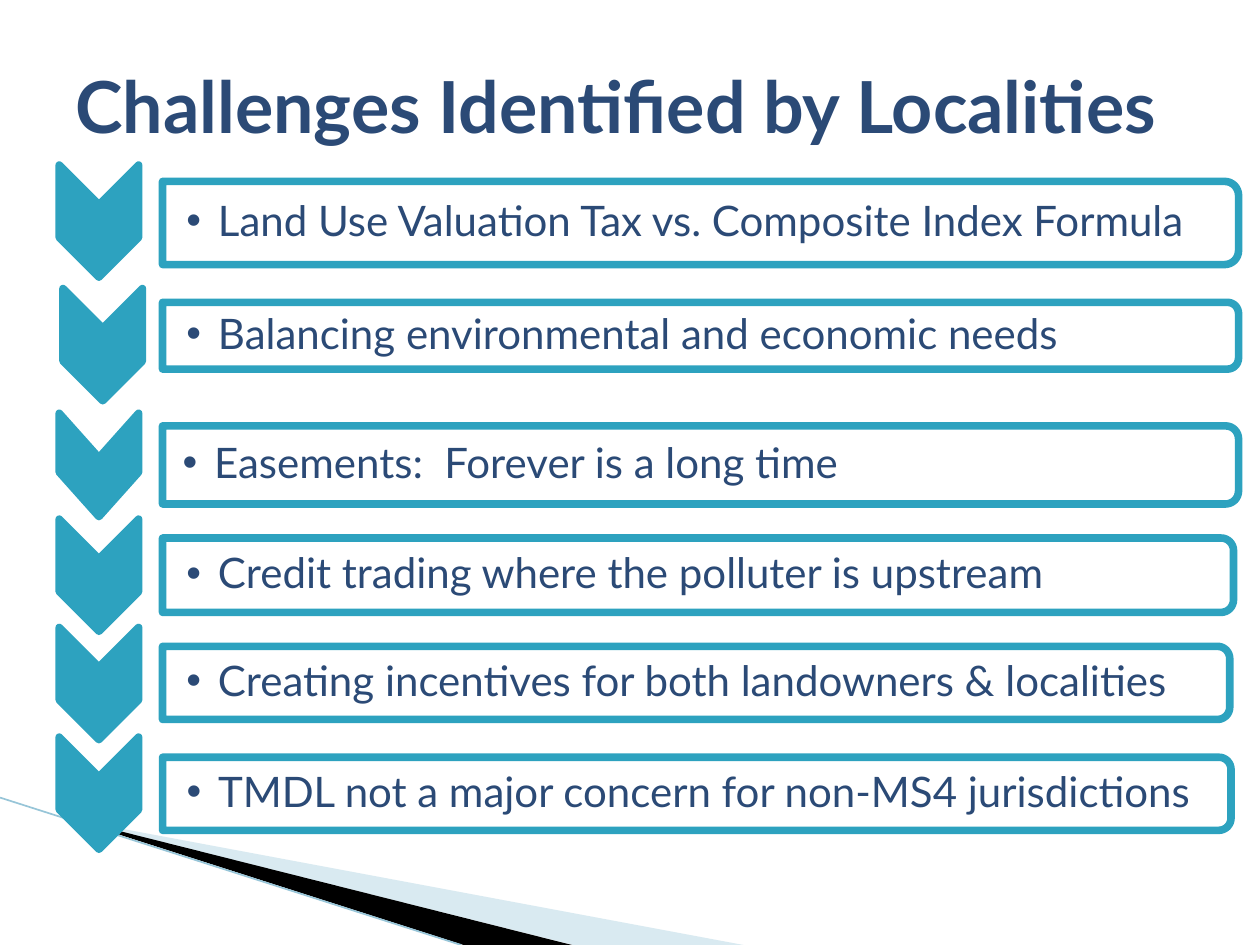
import math
from dataclasses import dataclass

from lxml import etree
from pptx import Presentation
from pptx.dml.color import RGBColor
from pptx.enum.shapes import MSO_CONNECTOR, MSO_SHAPE
from pptx.enum.text import MSO_ANCHOR
from pptx.oxml.ns import qn
from pptx.util import Inches, Pt

STRAIGHT = MSO_CONNECTOR.STRAIGHT
CHEVRON = MSO_SHAPE.CHEVRON
MIDDLE = MSO_ANCHOR.MIDDLE

FONT = "Lato"
NAVY = "2B4A76"
TEAL = "2DA2BF"
WHITE = "FFFFFF"
BLACK = "000000"
PALE_BLUE = "A0CBDC"
LINE_BLUE = "97C5D8"
OUTLINE_WIDTH = 4.33
CHEVRON_WIDTH = 0.63
BOX_LEFT = 1.29
ARC_STEPS = 8


@dataclass
class Challenge:
    text: str
    chevron_top: float
    box_top: float
    box_width: float
    box_height: float
    chevron_left: float = 0.47
    chevron_height: float = 0.89
    chevron_depth: float = 0.5
    inset: float = 0.19


CHALLENGES = [
    Challenge("Land Use Valuation Tax vs. Composite Index Formula", 1.31, 1.44, 8.54, 0.66),
    Challenge("Balancing environmental and economic needs", 2.29, 2.4, 8.54, 0.53, chevron_left=0.5),
    Challenge("Easements:  Forever is a long time", 3.28, 3.38, 8.54, 0.62,
              chevron_height=0.82, chevron_depth=0.56, inset=0.16),
    Challenge("Credit trading where the polluter is upstream", 4.12, 4.27, 8.5, 0.59),
    Challenge("Creating incentives for both landowners & localities", 4.98, 5.13, 8.47, 0.58),
    Challenge("TMDL not a major concern for non-MS4 jurisdictions", 5.85, 6.01, 8.48, 0.58),
]


def color(value: str) -> RGBColor:
    return RGBColor.from_string(value)


def paint(shape, fill: str, opacity: int = 100, outline: str | None = None) -> None:
    shape.shadow.inherit = False
    shape.fill.solid()
    shape.fill.fore_color.rgb = color(fill)
    if opacity < 100:
        fill_color = shape.fill._xPr.find(qn("a:solidFill"))[0]
        etree.SubElement(fill_color, qn("a:alpha"), val=str(opacity * 1000))
    if outline:
        shape.line.color.rgb = color(outline)
        shape.line.width = Pt(OUTLINE_WIDTH)
    else:
        shape.line.fill.background()


def add_outline(shapes, points: list[tuple[float, float]]):
    corners = [(Inches(x), Inches(y)) for x, y in points]
    builder = shapes.build_freeform(*corners[0], scale=1.0)
    builder.add_line_segments(corners[1:], close=True)
    return builder.convert_to_shape()


def box_points(challenge: Challenge) -> list[tuple[float, float]]:
    top = challenge.box_top
    bottom = top + challenge.box_height
    radius = challenge.box_height / 6
    center_x = BOX_LEFT + challenge.box_width - radius
    points = [(BOX_LEFT, top)]
    for center_y, start in ((top + radius, -90), (bottom - radius, 0)):
        for step in range(ARC_STEPS + 1):
            angle = math.radians(start + 90 * step / ARC_STEPS)
            points.append((center_x + radius * math.cos(angle),
                           center_y + radius * math.sin(angle)))
    return points + [(BOX_LEFT, bottom)]


def write(shape, text: str, size: float, bold: bool = False):
    frame = shape.text_frame
    frame.word_wrap = True
    frame.vertical_anchor = MIDDLE
    paragraph = frame.paragraphs[0]
    paragraph.text = text
    return paragraph, size, bold


def style(paragraph, size: float, bold: bool = False) -> None:
    paragraph.font.name = FONT
    paragraph.font.size = Pt(size)
    paragraph.font.bold = bold
    paragraph.font.color.rgb = color(NAVY)


def add_bullet(paragraph) -> None:
    properties = paragraph._p.get_or_add_pPr()
    properties.set("algn", "l")
    properties.set("marL", str(Inches(0.25)))
    properties.set("indent", str(Inches(-0.25)))
    etree.SubElement(properties, qn("a:buFont"), typeface="Arial")
    etree.SubElement(properties, qn("a:buChar"), char="•")


def add_challenge(slide, challenge: Challenge) -> None:
    shapes = slide.shapes.add_group_shape().shapes
    shift = (challenge.chevron_height - CHEVRON_WIDTH) / 2
    chevron = shapes.add_shape(
        CHEVRON, Inches(challenge.chevron_left - shift), Inches(challenge.chevron_top + shift),
        Inches(challenge.chevron_height), Inches(CHEVRON_WIDTH))
    chevron.rotation = 90
    chevron.adjustments[0] = challenge.chevron_depth
    paint(chevron, TEAL, outline=TEAL)

    box = add_outline(shapes, box_points(challenge))
    paint(box, WHITE, opacity=90, outline=TEAL)
    frame = box.text_frame
    frame.margin_left = Inches(challenge.inset)
    frame.margin_right = frame.margin_top = frame.margin_bottom = Inches(0.05)
    paragraph, size, bold = write(box, challenge.text, 24)
    add_bullet(paragraph)
    paragraph.line_spacing = 0.9
    style(paragraph, size, bold)


def add_swoosh(slide) -> None:
    pale_wedge = add_outline(slide.shapes, [(0.55, 6.5), (5.9, 7.5), (4.55, 7.5)])
    paint(pale_wedge, PALE_BLUE, opacity=40)
    black_wedge = add_outline(slide.shapes, [(0.53, 6.49), (4.54, 7.5), (3.68, 7.5)])
    paint(black_wedge, BLACK)
    edge = slide.shapes.add_connector(
        STRAIGHT, Inches(0), Inches(6.33), Inches(3.66), Inches(7.5))
    edge.line.color.rgb = color(LINE_BLUE)
    edge.line.width = Pt(0.95)
    etree.SubElement(edge._element.spPr, qn("a:effectLst"))


def add_title(slide, text: str) -> None:
    title = slide.shapes.add_textbox(Inches(0.5), Inches(0.21), Inches(9), Inches(1.25))
    paragraph, size, bold = write(title, text, 41, bold=True)
    style(paragraph, size, bold)


def main() -> None:
    presentation = Presentation()
    presentation.slide_width = Inches(10)
    presentation.slide_height = Inches(7.5)
    slide = presentation.slides.add_slide(presentation.slide_layouts[6])
    add_swoosh(slide)
    add_title(slide, "Challenges Identified by Localities")
    for challenge in CHALLENGES:
        add_challenge(slide, challenge)
    presentation.save("out.pptx")


if __name__ == "__main__":
    main()
